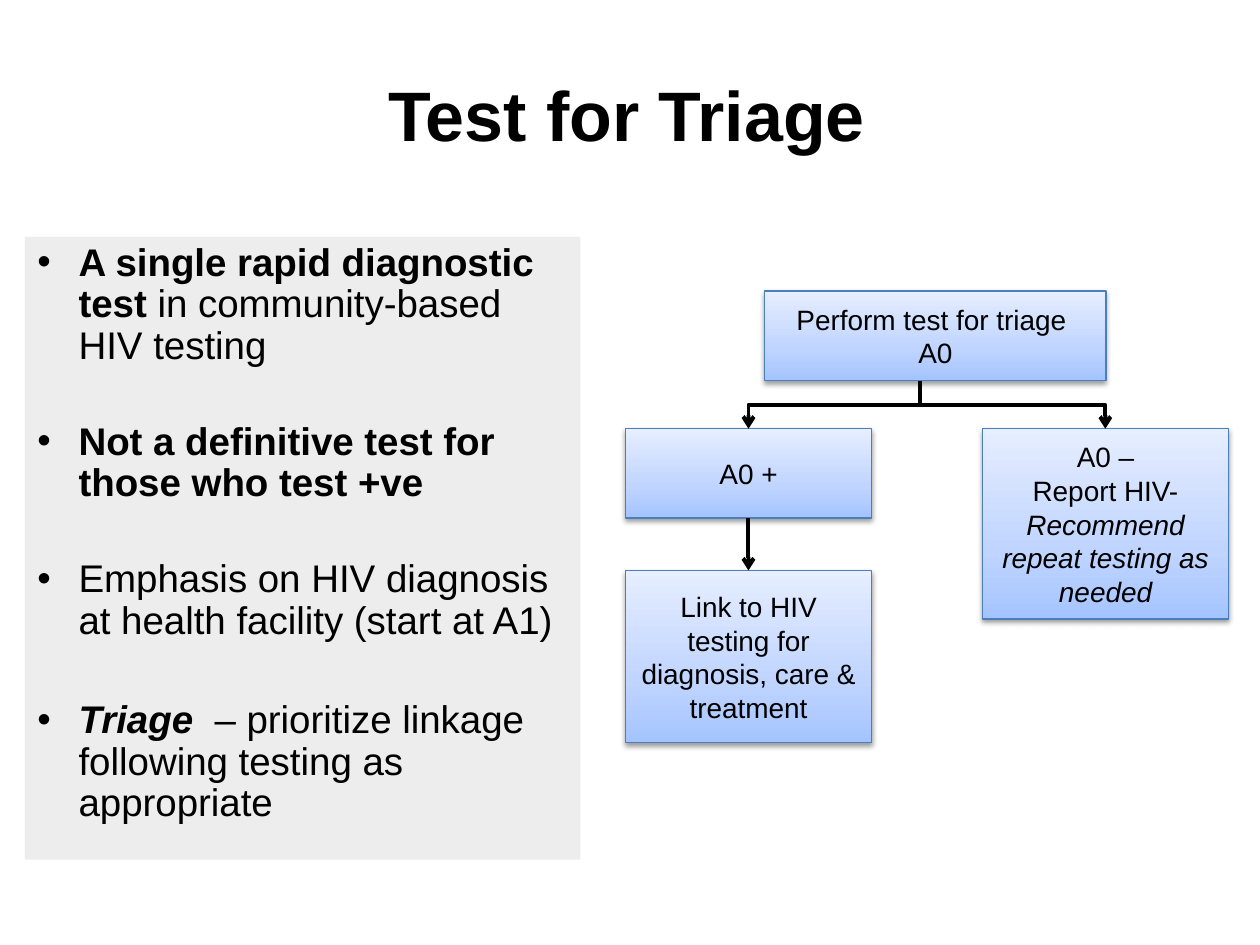
from copy import deepcopy

from lxml import etree
from pptx import Presentation
from pptx.dml.color import RGBColor
from pptx.enum.shapes import MSO_CONNECTOR, MSO_SHAPE
from pptx.enum.text import MSO_ANCHOR, MSO_AUTO_SIZE, PP_ALIGN
from pptx.oxml.ns import qn
from pptx.util import Pt

RECTANGLE = MSO_SHAPE.RECTANGLE
STRAIGHT, ELBOW = MSO_CONNECTOR.STRAIGHT, MSO_CONNECTOR.ELBOW
TOP, MIDDLE = MSO_ANCHOR.TOP, MSO_ANCHOR.MIDDLE
LEFT, CENTER = PP_ALIGN.LEFT, PP_ALIGN.CENTER
NO_AUTOFIT = MSO_AUTO_SIZE.NONE

FONT = "Arial"
COLORS = {
    "text": "000000",
    "panel": "EDEDED",
    "box_low": "A4C4FF",
    "box_mid": "BFD4FF",
    "box_high": "E6EEFF",
    "box_line": "4B7EBC",
    "arrow": "000000",
    "shadow": "000000",
}
BOX_WIDTH = 140.5
BRANCH_TOP = 245

# Each bullet: space before, then runs of (text, bold, italic)
BULLETS = [
    (0, [("A single rapid diagnostic test ", True, False),
         ("in community-based HIV testing", False, False)]),
    (31, [("Not a definitive test for those who test +ve", True, False)]),
    (31, [("Emphasis on HIV diagnosis at health facility (start at A1)", False, False)]),
    (33, [("Triage  ", True, True),
          ("– prioritize linkage following testing as appropriate", False, False)]),
]

# Each step: left, top, width, height, then lines of (text, italic)
STEPS = [
    (437, 166.3, 195, 51, [("Perform test for triage ", False), ("A0", False)]),
    (357.5, 326, BOX_WIDTH, 98.5,
     [("Link to HIV testing for diagnosis, care & treatment", False)]),
    (357.5, BRANCH_TOP, BOX_WIDTH, 51, [("A0 +", False)]),
    (561.5, BRANCH_TOP, BOX_WIDTH, 108.7,
     [("A0 –", False), ("Report HIV-", False),
      ("Recommend repeat testing as needed", True)]),
]


def rgb(name):
    return RGBColor.from_string(COLORS[name])


def place(shape, left, top, width, height):
    shape.left, shape.top = Pt(left), Pt(top)
    shape.width, shape.height = Pt(width), Pt(height)


def format_run(run, size, bold=False, italic=False):
    font = run.font
    font.name, font.size = FONT, Pt(size)
    font.bold, font.italic = bold, italic
    font.color.rgb = rgb("text")


def add_title(slide, text):
    title = slide.shapes.title
    place(title, 193, 42.5, 330, 37.5)
    frame = title.text_frame
    frame.text = text
    frame.auto_size = NO_AUTOFIT
    frame.vertical_anchor = TOP
    paragraph = frame.paragraphs[0]
    paragraph.alignment = CENTER
    paragraph.line_spacing = 0.9
    format_run(paragraph.runs[0], 40, bold=True)


def set_bullet(paragraph, indent):
    properties = paragraph._p.get_or_add_pPr()
    properties.set("marL", str(Pt(indent)))
    properties.set("indent", str(-Pt(indent)))
    etree.SubElement(properties, qn("a:buFont"), typeface=FONT)
    etree.SubElement(properties, qn("a:buChar"), char="•")


def add_bullet_panel(slide, bullets):
    panel = slide.shapes.add_textbox(Pt(14.2), Pt(135.3), Pt(317.5), Pt(356))
    panel.fill.solid()
    panel.fill.fore_color.rgb = rgb("panel")
    frame = panel.text_frame
    frame.word_wrap = True
    for index, (space_before, runs) in enumerate(bullets):
        paragraph = frame.add_paragraph() if index else frame.paragraphs[0]
        paragraph.alignment = LEFT
        paragraph.line_spacing = 0.9
        paragraph.space_before = Pt(space_before)
        set_bullet(paragraph, 23.6)
        for text, bold, italic in runs:
            run = paragraph.add_run()
            run.text = text
            format_run(run, 22, bold, italic)


def fill_gradient(shape):
    """Fill upwards with the three box colours."""
    shape.fill.gradient()
    shape.fill.gradient_angle = 90
    stop_list = shape._element.spPr.find(".//" + qn("a:gsLst"))
    stop_list.append(deepcopy(stop_list[-1]))
    levels = [(0, "box_low"), (0.35, "box_mid"), (1, "box_high")]
    for stop, (position, color) in zip(shape.fill.gradient_stops, levels):
        stop.position = position
        stop.color.rgb = rgb(color)


def add_soft_shadow(shape):
    shape.shadow.inherit = False
    effects = shape._element.spPr.find(qn("a:effectLst"))
    shadow = etree.SubElement(
        effects, qn("a:outerShdw"), blurRad=str(Pt(3.1)), dist=str(Pt(1.6)),
        dir="5400000", rotWithShape="0")
    color = etree.SubElement(shadow, qn("a:srgbClr"), val=COLORS["shadow"])
    etree.SubElement(color, qn("a:alpha"), val="38000")


def add_step(slide, left, top, width, height, lines):
    box = slide.shapes.add_shape(RECTANGLE, Pt(left), Pt(top), Pt(width), Pt(height))
    fill_gradient(box)
    box.line.color.rgb = rgb("box_line")
    box.line.width = Pt(0.75)
    add_soft_shadow(box)
    frame = box.text_frame
    frame.word_wrap = True
    frame.vertical_anchor = MIDDLE
    frame.text = "\n".join(text for text, _ in lines)
    for paragraph, (_, italic) in zip(frame.paragraphs, lines):
        paragraph.alignment = CENTER
        format_run(paragraph.runs[0], 16, italic=italic)


def add_arrow(slide, start, end):
    """Draw a downward arrow, with an elbow where the ends are not aligned."""
    (x1, y1), (x2, y2) = start, end
    kind = STRAIGHT if x1 == x2 else ELBOW
    arrow = slide.shapes.add_connector(kind, Pt(x1), Pt(y1), Pt(x2), Pt(y2))
    properties = arrow._element.spPr
    if kind == ELBOW:
        # The elbow preset runs sideways, so its frame is turned a quarter
        drop, span = y2 - y1, abs(x2 - x1)
        place(arrow, (x1 + x2 - drop) / 2, (y1 + y2 - span) / 2, drop, span)
        frame = properties.find(qn("a:xfrm"))
        frame.attrib.pop("flipH", None)
        frame.set("rot", "16200000" if x2 > x1 else "5400000")
        if x2 > x1:
            frame.set("flipH", "1")
    arrow.line.color.rgb = rgb("arrow")
    arrow.line.width = Pt(2.25)
    etree.SubElement(properties.find(qn("a:ln")), qn("a:tailEnd"), type="arrow")
    etree.SubElement(properties, qn("a:effectLst"))


def main():
    presentation = Presentation()
    presentation.slide_width, presentation.slide_height = Pt(720), Pt(540)
    slide = presentation.slides.add_slide(presentation.slide_layouts[5])
    add_title(slide, "Test for Triage")
    add_bullet_panel(slide, BULLETS)
    for step in STEPS:
        add_step(slide, *step)
    triage_exit = (525.6, 217.8)
    positive_x, negative_x = 427.7, 631.6
    add_arrow(slide, triage_exit, (negative_x, BRANCH_TOP))
    add_arrow(slide, triage_exit, (positive_x, BRANCH_TOP))
    add_arrow(slide, (positive_x, 296), (positive_x, 326))
    presentation.save("out.pptx")


if __name__ == "__main__":
    main()
